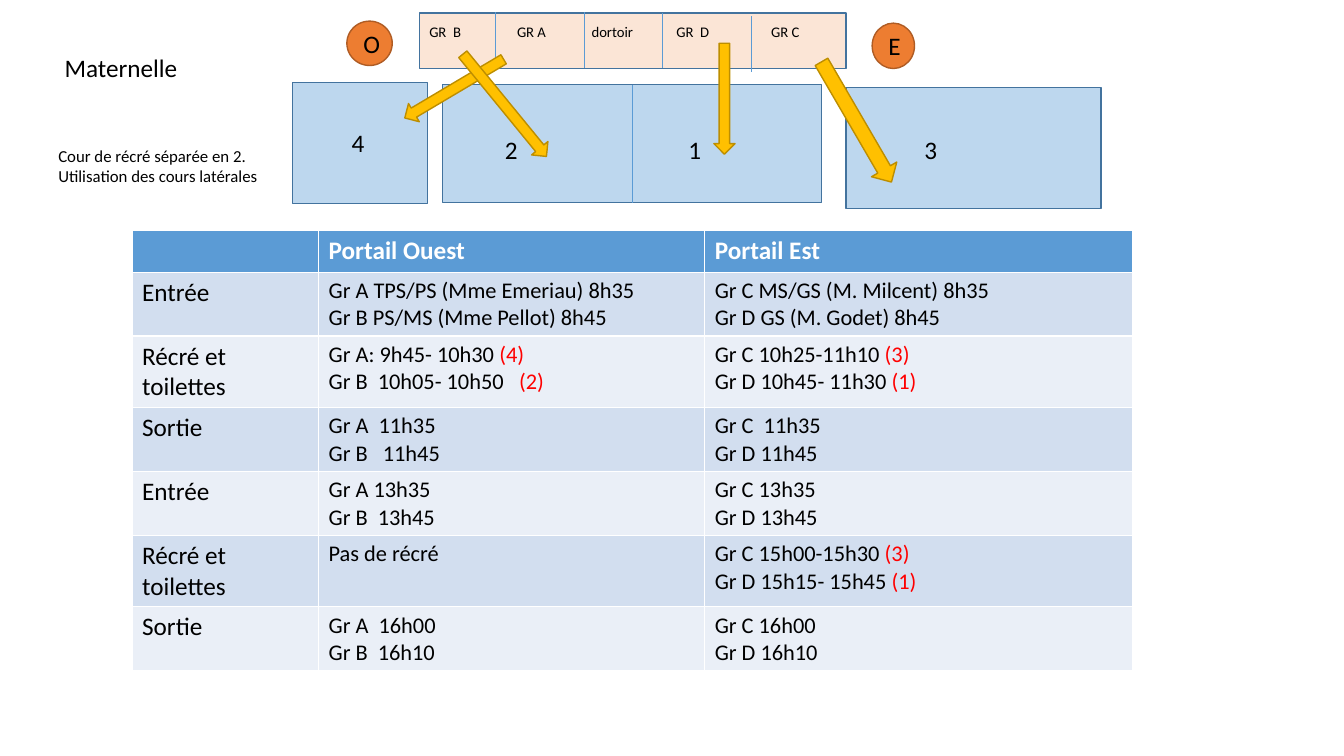
from lxml import etree
from pptx import Presentation
from pptx import util as u
from pptx.dml.color import RGBColor
from pptx.enum import shapes, text
from pptx.oxml import ns

PX = 9144
BLACK = RGBColor(0, 0, 0)
WHITE = RGBColor(255, 255, 255)
RED = RGBColor(255, 0, 0)
YARD_BLUE = RGBColor(0xBD, 0xD7, 0xEE)
YARD_EDGE = RGBColor(0x43, 0x73, 0x9E)
ROOM_PEACH = RGBColor(0xFB, 0xE5, 0xD6)
ACCENT_BLUE = RGBColor(0x5B, 0x9B, 0xD5)
ARROW_GOLD = RGBColor(0xFF, 0xC0, 0x00)
ARROW_EDGE = RGBColor(0xBD, 0x8E, 0x00)
GATE_ORANGE = RGBColor(0xED, 0x7D, 0x31)
GATE_EDGE = RGBColor(0xAF, 0x5C, 0x24)
BANDS = [RGBColor(0xEA, 0xEF, 0xF7), RGBColor(0xD2, 0xDE, 0xEF)]

presentation = Presentation()
presentation.slide_width = 1333 * PX
presentation.slide_height = 750 * PX
slide = presentation.slides.add_slide(presentation.slide_layouts[5])


def format_text(paragraph, size, color=BLACK, bold=False):
    for run in paragraph.runs:
        run.font.name = "Calibri"
        run.font.size = u.Pt(size)
        run.font.color.rgb = color
        run.font.bold = bold


def add_box(kind, box, fill, edge):
    shape = slide.shapes.add_shape(kind, *[length * PX for length in box])
    shape.shadow.inherit = False
    shape.fill.solid()
    shape.fill.fore_color.rgb = fill
    shape.line.color.rgb = edge
    shape.line.width = u.Pt(1)
    return shape


title = slide.shapes.title
title.left, title.top, title.width, title.height = [n * PX for n in (54, 47, 261, 40)]
title.text_frame.text = "Maternelle"
title.text_frame.vertical_anchor = text.MSO_ANCHOR.TOP
title.text_frame.paragraphs[0].alignment = text.PP_ALIGN.LEFT
format_text(title.text_frame.paragraphs[0], 18)

RECTANGLE = shapes.MSO_SHAPE.RECTANGLE
central_yard = add_box(RECTANGLE, (439, 84, 376, 117), YARD_BLUE, YARD_EDGE)
add_box(RECTANGLE, (290, 82, 134, 120), YARD_BLUE, YARD_EDGE)
add_box(RECTANGLE, (839, 87, 253, 120), YARD_BLUE, YARD_EDGE)

classrooms = add_box(RECTANGLE, (416, 13, 423, 55), ROOM_PEACH, YARD_EDGE)
frame = classrooms.text_frame
frame.text = "GR  B\tGR A\tdortoir\tGR  D\tGR C"
frame.vertical_anchor = text.MSO_ANCHOR.TOP
frame.margin_top = 10 * PX
room_labels = frame.paragraphs[0]
room_labels.alignment = text.PP_ALIGN.LEFT
format_text(room_labels, 10.5)
tab_list = etree.SubElement(room_labels._p.get_or_add_pPr(), ns.qn("a:tabLst"))
for position in (87, 161, 245, 339):
    etree.SubElement(tab_list, ns.qn("a:tab"), pos=str(position * PX), algn="l")

dividers = []
for x, top, bottom in [(491, 12, 66), (580, 12, 67), (657, 13, 67), (745, 16, 71),
                       (627, 84, 201)]:
    divider = slide.shapes.add_connector(
        shapes.MSO_CONNECTOR.STRAIGHT, x * PX, top * PX, x * PX, bottom * PX)
    divider.line.color.rgb = ACCENT_BLUE
    divider.line.width = u.Pt(0.5)
    etree.SubElement(divider._element.spPr, ns.qn("a:effectLst"))
    dividers.append(divider)
dividers[-1].begin_connect(central_yard, 0)
dividers[-1].end_connect(central_yard, 2)

for label, size, box in [
    ("Cour de récré séparée en 2. Utilisation des cours latérales", 12, (48, 140, 247, 50)),
    ("4", 18, (339, 121, 27, 40)),
    ("2", 18, (491, 128, 63, 40)),
    ("1", 18, (673, 128, 72, 40)),
    ("3", 18, (907, 128, 71, 40)),
]:
    text_box = slide.shapes.add_textbox(*[length * PX for length in box])
    text_box.text_frame.word_wrap = True
    text_box.text_frame.text = label
    format_text(text_box.text_frame.paragraphs[0], size)

for box, rotation in [((440, 31, 21, 114), 59.3), ((490, 39, 21, 131), 320.7),
                      ((708, 43, 21, 110), 0), ((835, 52, 29, 138), 329.8)]:
    arrow = add_box(shapes.MSO_SHAPE.DOWN_ARROW, box, ARROW_GOLD, ARROW_EDGE)
    arrow.rotation = rotation

schedule = [
    ("", "Portail Ouest", "Portail Est"),
    ("Entrée", "Gr A TPS/PS (Mme Emeriau) 8h35\nGr B PS/MS (Mme Pellot) 8h45",
     "Gr C MS/GS (M. Milcent) 8h35\nGr D GS (M. Godet) 8h45"),
    ("Récré et toilettes", "Gr A: 9h45- 10h30 |(4)\nGr B  10h05- 10h50   |(2)",
     "Gr C 10h25-11h10 |(3)\nGr D 10h45- 11h30 |(1)"),
    ("Sortie", "Gr A  11h35\nGr B   11h45", "Gr C  11h35\nGr D 11h45"),
    ("Entrée", "Gr A 13h35\nGr B  13h45", "Gr C 13h35\nGr D 13h45"),
    ("Récré et toilettes", "Pas de récré",
     "Gr C 15h00-15h30 |(3)\nGr D 15h15- 15h45 |(1)"),
    ("Sortie", "Gr A  16h00\nGr B  16h10", "Gr C 16h00\nGr D 16h10"),
]
row_heights = [41, 63, 71, 63, 63, 71, 63]
table = slide.shapes.add_table(
    len(schedule), 3, 131 * PX, 229 * PX, 992 * PX, sum(row_heights) * PX).table
for column, width in zip(table.columns, (185, 383, 424)):
    column.width = width * PX
for row_index, entries in enumerate(schedule):
    table.rows[row_index].height = row_heights[row_index] * PX
    header = row_index == 0
    for column_index, entry in enumerate(entries):
        cell = table.cell(row_index, column_index)
        cell.fill.solid()
        cell.fill.fore_color.rgb = ACCENT_BLUE if header else BANDS[row_index % 2]
        cell.text_frame.text = entry.replace("|", "")
        size = 18 if header or column_index == 0 else 16
        for paragraph, line in zip(cell.text_frame.paragraphs, entry.split("\n")):
            times, separator, yard = line.partition("|")
            paragraph.text = times
            if yard:
                paragraph.add_run().text = yard
            format_text(paragraph, size, WHITE if header else BLACK, header)
            if yard:
                paragraph.runs[-1].font.color.rgb = RED

for letter, box in [("O", (344, 21, 45, 44)), ("E", (865, 23, 42, 45))]:
    gate = add_box(shapes.MSO_SHAPE.OVAL, box, GATE_ORANGE, GATE_EDGE)
    gate.text_frame.text = letter
    gate.text_frame.vertical_anchor = text.MSO_ANCHOR.MIDDLE
    gate.text_frame.paragraphs[0].alignment = text.PP_ALIGN.CENTER
    format_text(gate.text_frame.paragraphs[0], 18)

presentation.save("out.pptx")
